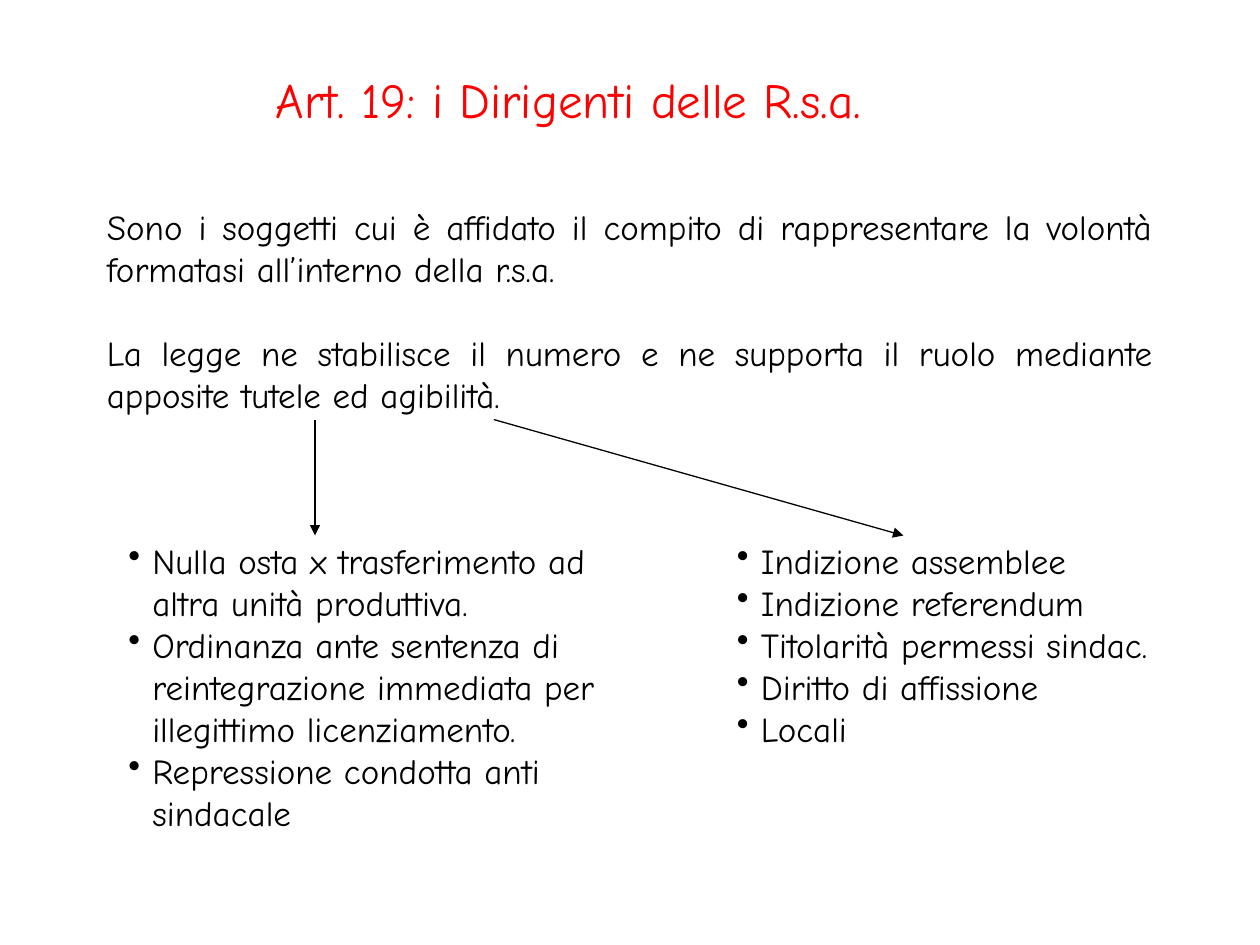
from dataclasses import dataclass

from lxml.etree import SubElement
from pptx import Presentation
from pptx.dml.color import RGBColor
from pptx.enum.shapes import MSO_CONNECTOR
from pptx.enum.text import MSO_ANCHOR, MSO_AUTO_SIZE, PP_ALIGN
from pptx.oxml.ns import qn
from pptx.slide import Slide
from pptx.text.text import TextFrame
from pptx.util import Inches, Pt


@dataclass(frozen=True)
class Theme:
    """Colours, typeface and type sizes of the slide."""
    font: str = "Comic Neue"
    title_color: RGBColor = RGBColor(255, 0, 0)
    ink: RGBColor = RGBColor(0, 0, 0)
    background: RGBColor = RGBColor(255, 255, 255)
    title_size: Pt = Pt(28)
    body_size: Pt = Pt(20)
    paragraph_gap: Pt = Pt(24)
    line_width: Pt = Pt(0.75)
    bullet_indent: Inches = Inches(0.19)


@dataclass(frozen=True)
class TextBlock:
    """A box of paragraphs, placed in inches."""
    left: float
    top: float
    width: float
    height: float
    paragraphs: tuple[str, ...]
    bulleted: bool = True


@dataclass(frozen=True)
class Branch:
    """A list of protections and the arrow that leads to it."""
    arrow_start: float
    arrow_end: float
    block: TextBlock


THEME = Theme()
ARROW_TOP, ARROW_BOTTOM, LIST_TOP = 3.33, 4.25, 4.23

TITLE = TextBlock(2.09, 0.5, 5.57, 0.57, ("Art. 19: i Dirigenti delle R.s.a.",), False)
INTRODUCTION = TextBlock(0.75, 1.58, 8.5, 2.08, (
    "Sono i soggetti cui è affidato il compito di rappresentare la volontà "
    "formatasi all’interno della r.s.a.",
    "La legge ne stabilisce il numero e ne supporta il ruolo mediante "
    "apposite tutele ed agibilità.",
), False)
BRANCHES = (
    Branch(2.5, 2.5, TextBlock(0.92, LIST_TOP, 4.08, 2.77, (
        "Nulla osta x trasferimento ad altra unità produttiva.",
        "Ordinanza ante sentenza di reintegrazione immediata per illegittimo licenziamento.",
        "Repressione condotta anti sindacale",
    ))),
    Branch(3.92, 7.17, TextBlock(5.75, LIST_TOP, 3.92, 2.1, (
        "Indizione assemblee",
        "Indizione referendum",
        "Titolarità permessi sindac.",
        "Diritto di affissione",
        "Locali",
    ))),
)


def write_paragraphs(frame: TextFrame, block: TextBlock, size: Pt, color: RGBColor,
                     alignment: PP_ALIGN, gap: Pt = Pt(0)) -> None:
    """Fill a text frame with one styled run per paragraph."""
    frame.vertical_anchor = MSO_ANCHOR.TOP
    for index, text in enumerate(block.paragraphs):
        paragraph = frame.add_paragraph() if index else frame.paragraphs[0]
        paragraph.alignment = alignment
        paragraph.space_before = gap if index else Pt(0)
        if block.bulleted:
            properties = paragraph._p.get_or_add_pPr()
            properties.set("marL", str(THEME.bullet_indent))
            properties.set("indent", str(-THEME.bullet_indent))
            SubElement(properties, qn("a:buChar")).set("char", "•")
        run = paragraph.add_run()
        run.text = text
        run.font.name = THEME.font
        run.font.size = size
        run.font.color.rgb = color


def add_title(slide: Slide) -> None:
    """Move the title placeholder into place and write the heading."""
    title = slide.shapes.title
    title.left, title.top = Inches(TITLE.left), Inches(TITLE.top)
    title.width, title.height = Inches(TITLE.width), Inches(TITLE.height)
    title.text_frame.word_wrap = False
    title.text_frame.auto_size = MSO_AUTO_SIZE.NONE
    write_paragraphs(title.text_frame, TITLE, THEME.title_size, THEME.title_color, PP_ALIGN.LEFT)


def add_text(slide: Slide, block: TextBlock, alignment: PP_ALIGN, gap: Pt = Pt(0)) -> None:
    """Add a wrapping text box in the body style."""
    box = slide.shapes.add_textbox(Inches(block.left), Inches(block.top),
                                   Inches(block.width), Inches(block.height))
    box.text_frame.word_wrap = True
    write_paragraphs(box.text_frame, block, THEME.body_size, THEME.ink, alignment, gap)


def add_arrow(slide: Slide, start: float, end: float) -> None:
    """Draw an arrow from the introduction down to a list."""
    arrow = slide.shapes.add_connector(MSO_CONNECTOR.STRAIGHT, Inches(start), Inches(ARROW_TOP),
                                       Inches(end), Inches(ARROW_BOTTOM))
    arrow.line.color.rgb = THEME.ink
    arrow.line.width = THEME.line_width
    SubElement(arrow.line._get_or_add_ln(), qn("a:tailEnd")).set("type", "triangle")
    SubElement(arrow._element.spPr, qn("a:effectLst"))


def main() -> None:
    """Build and save the slide."""
    presentation = Presentation()
    presentation.slide_width, presentation.slide_height = Inches(10), Inches(7.5)
    slide = presentation.slides.add_slide(presentation.slide_layouts.get_by_name("Title Only"))
    slide.background.fill.solid()
    slide.background.fill.fore_color.rgb = THEME.background
    add_title(slide)
    add_text(slide, INTRODUCTION, PP_ALIGN.JUSTIFY, THEME.paragraph_gap)
    for branch in BRANCHES:
        add_text(slide, branch.block, PP_ALIGN.LEFT)
        add_arrow(slide, branch.arrow_start, branch.arrow_end)
    presentation.save("out.pptx")


if __name__ == "__main__":
    main()
